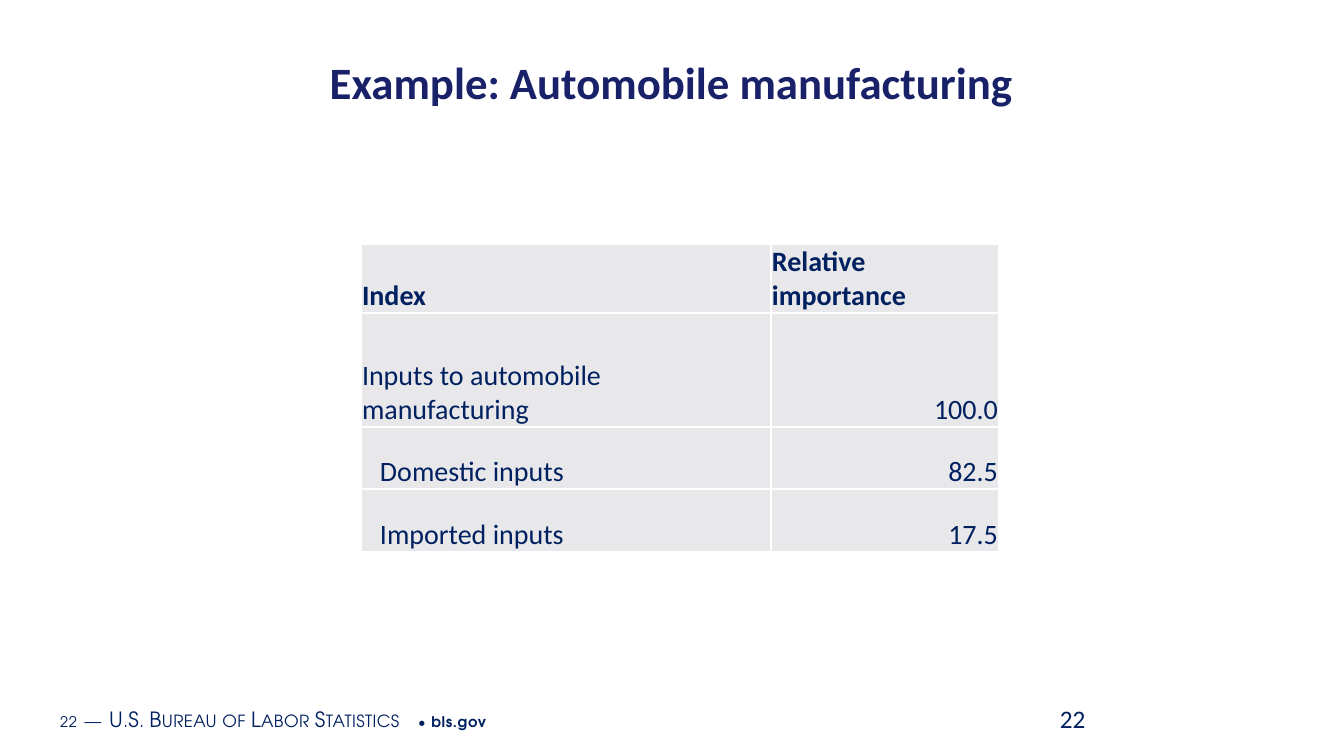
from lxml import etree
from pptx import Presentation
from pptx.dml.color import RGBColor
from pptx.enum.text import MSO_ANCHOR, PP_ALIGN
from pptx.oxml.ns import qn
from pptx.util import Emu, Pt

TOP, MIDDLE, BOTTOM = MSO_ANCHOR.TOP, MSO_ANCHOR.MIDDLE, MSO_ANCHOR.BOTTOM
LEFT, CENTER, RIGHT = PP_ALIGN.LEFT, PP_ALIGN.CENTER, PP_ALIGN.RIGHT
NAVY, TITLE_BLUE, CELL_GREY, WHITE = "002060", "192168", "E8E8EB", "FFFFFF"
FOOTER_FONT = "TeX Gyre Adventor"


def px(length):
    return Emu(round(length * 914400 / 100.8))


def add_text(paragraph, text, size=20, font="Calibri", color=NAVY, bold=False,
             align=LEFT, spacing=0, small_caps=False):
    paragraph.alignment = align
    run = paragraph.add_run()
    run.text = text
    run.font.size = Pt(size)
    run.font.name = font
    run.font.bold = bold
    run.font.color.rgb = RGBColor.from_string(color)
    properties = run.font._element
    if spacing:
        properties.set("spc", str(spacing))
    if small_caps:
        properties.set("cap", "small")


presentation = Presentation()
presentation.slide_width, presentation.slide_height = px(1344), px(756)
slide = presentation.slides.add_slide(presentation.slide_layouts[5])

footer = slide.shapes.add_textbox(px(53), px(699), px(854), px(40))
footer_frame = footer.text_frame
footer_frame.word_wrap = True
footer_frame.vertical_anchor = MIDDLE
footer_frame.margin_left = footer_frame.margin_right = px(7)
footer_frame.margin_top = footer_frame.margin_bottom = px(4)
footer_runs = [
    ("22", 10.5, 50, False, False),
    (" ", 16, 50, False, False),
    ("—", 15, 30, True, False),
    (" ", 16, 50, False, False),
    ("U.S. Bureau of Labor Statistics", 15, 30, True, False),
    (" • ", 10.5, 50, False, False),
    ("bls.gov", 10.5, 50, False, True),
]
for text, size, spacing, small_caps, bold in footer_runs:
    add_text(footer_frame.paragraphs[0], text, size=size, font=FOOTER_FONT,
             spacing=spacing, small_caps=small_caps, bold=bold)

title = slide.shapes.title
title.left, title.top, title.width, title.height = px(54), px(50), px(1235), px(89)
title.text_frame.vertical_anchor = TOP
add_text(title.text_frame.paragraphs[0], "Example: Automobile manufacturing",
         size=32, color=TITLE_BLUE, bold=True, align=CENTER)

rows = [
    ("Index", "Relative importance"),
    ("Inputs to automobile manufacturing", "100.0"),
    ("Domestic inputs", "82.5"),
    ("Imported inputs", "17.5"),
]
column_widths = [410, 228]
row_heights = [69, 114, 62, 63]
table = slide.shapes.add_table(len(rows), len(column_widths), px(361), px(244),
                               px(sum(column_widths)), px(sum(row_heights))).table
table.first_row = table.horz_banding = False
for column, width in zip(table.columns, column_widths):
    column.width = px(width)

for row_index, (values, height) in enumerate(zip(rows, row_heights)):
    table.rows[row_index].height = px(height)
    for column_index, value in enumerate(values):
        cell = table.cell(row_index, column_index)
        is_header = row_index == 0
        is_number = column_index == 1 and not is_header
        is_indented = column_index == 0 and row_index > 1
        cell.vertical_anchor = BOTTOM
        cell.margin_left = px(19 if is_indented else 1)
        cell.margin_right = cell.margin_top = px(1)
        cell.margin_bottom = 0
        add_text(cell.text_frame.paragraphs[0], value, bold=is_header,
                 align=RIGHT if is_number else LEFT)
        properties = cell._tc.get_or_add_tcPr()
        for side in ("a:lnL", "a:lnR", "a:lnT", "a:lnB"):
            line = etree.SubElement(properties, qn(side), w=str(Pt(1)))
            line_fill = etree.SubElement(line, qn("a:solidFill"))
            etree.SubElement(line_fill, qn("a:srgbClr"), val=WHITE)
        cell.fill.solid()
        cell.fill.fore_color.rgb = RGBColor.from_string(CELL_GREY)

slide_number = slide.shapes.add_textbox(px(1050), px(698), px(76), px(40))
slide_number.text_frame.word_wrap = True
add_text(slide_number.text_frame.paragraphs[0], "22", size=18)

presentation.save("out.pptx")
